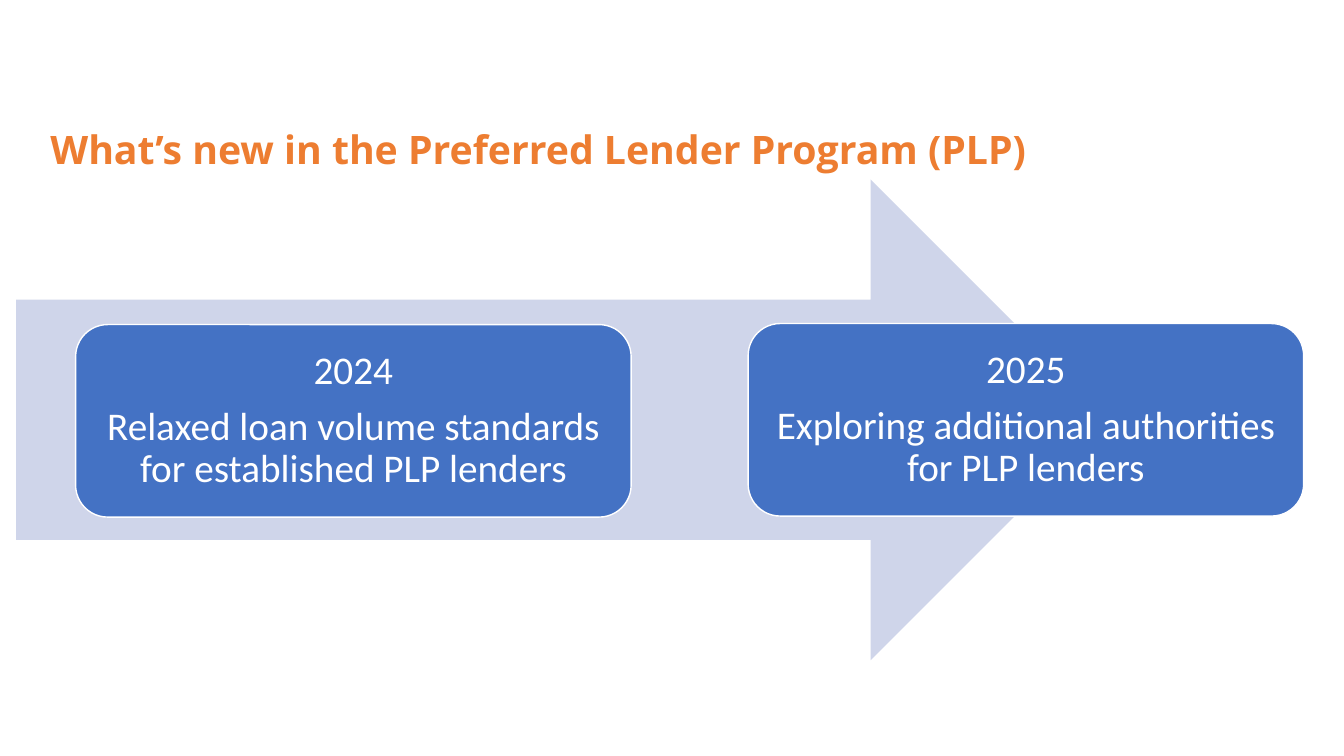
from dataclasses import dataclass

from pptx import Presentation
from pptx.dml.color import RGBColor
from pptx.enum.shapes import MSO_SHAPE as Kind
from pptx.enum.text import MSO_ANCHOR as Anchor, MSO_AUTO_SIZE as Fit, PP_ALIGN as Align
from pptx.shapes.autoshape import Shape
from pptx.slide import Slide
from pptx.text.text import TextFrame
from pptx.util import Inches, Pt

ORANGE, BLUE, PALE, WHITE = "ED7D31", "4472C4", "CFD5EA", "FFFFFF"


@dataclass
class Step:
    left: float
    top: float
    year: str
    news: str


STEPS = [
    Step(0.75, 3.22, "2024", "Relaxed loan volume standards for established PLP lenders"),
    Step(7.42, 3.21, "2025", "Exploring additional authorities for PLP lenders"),
]


def color(code: str) -> RGBColor:
    return RGBColor.from_string(code)


def write(frame: TextFrame, lines: list[str], face: str, code: str,
          align: Align, after: float = 0, bold: bool = False) -> None:
    """Fill a frame with one 28 pt paragraph per line."""
    frame.word_wrap = True
    frame.auto_size = Fit.NONE
    frame.vertical_anchor = Anchor.MIDDLE
    for i, line in enumerate(lines):
        para = frame.add_paragraph() if i else frame.paragraphs[0]
        para.alignment = align
        para.line_spacing = 0.9
        para.space_before = Pt(0)
        para.space_after = Pt(after)
        run = para.add_run()
        run.text = line
        font = run.font
        font.name, font.size, font.bold = face, Pt(28), bold
        font.color.rgb = color(code)


def add_shape(slide: Slide, kind: Kind, left: float, top: float,
              width: float, height: float, fill: str) -> Shape:
    shape = slide.shapes.add_shape(
        kind, Inches(left), Inches(top), Inches(width), Inches(height))
    shape.shadow.inherit = False
    shape.fill.solid()
    shape.fill.fore_color.rgb = color(fill)
    shape.line.fill.background()
    return shape


def add_step(slide: Slide, step: Step) -> None:
    card = add_shape(slide, Kind.ROUNDED_RECTANGLE, step.left, step.top, 5.51, 1.91, BLUE)
    card.line.color.rgb = color(WHITE)
    card.line.width = Pt(1)
    frame = card.text_frame
    frame.margin_left = frame.margin_right = Inches(0.12)
    frame.margin_top = frame.margin_bottom = Inches(0.12)
    write(frame, [step.year, step.news], "Calibri", WHITE, Align.CENTER, after=9.8)


def main() -> None:
    deck = Presentation()
    deck.slide_width, deck.slide_height = Inches(13.33), Inches(7.5)
    slide = deck.slides.add_slide(deck.slide_layouts[5])

    title = slide.shapes.title
    title.left, title.top = Inches(0.4), Inches(1.13)
    title.width, title.height = Inches(10.36), Inches(0.76)
    write(title.text_frame, ["What’s new in the Preferred Lender Program (PLP)"],
          "Open Sans", ORANGE, Align.LEFT, bold=True)

    add_shape(slide, Kind.RIGHT_ARROW, 0.16, 1.78, 10.86, 4.77, PALE)
    for step in STEPS:
        add_step(slide, step)
    deck.save("out.pptx")


if __name__ == "__main__":
    main()
